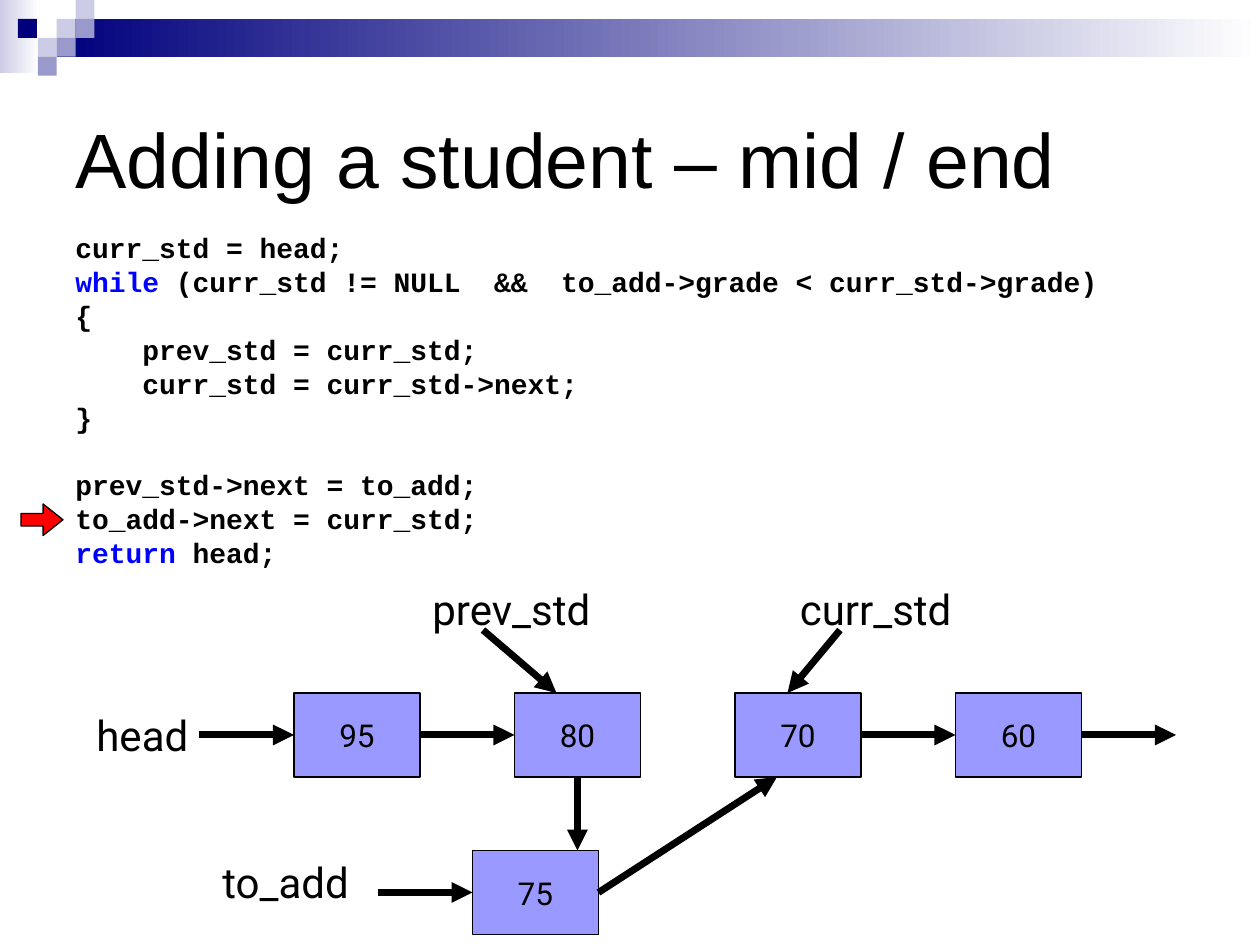
from lxml import etree
from pptx import Presentation
from pptx.dml.color import RGBColor
from pptx.enum.shapes import MSO_CONNECTOR, MSO_SHAPE
from pptx.enum.text import MSO_ANCHOR, PP_ALIGN
from pptx.oxml.ns import qn
from pptx.util import Inches, Pt

RECT, RIGHT_ARROW = MSO_SHAPE.RECTANGLE, MSO_SHAPE.RIGHT_ARROW
STRAIGHT = MSO_CONNECTOR.STRAIGHT
MIDDLE, CENTER = MSO_ANCHOR.MIDDLE, PP_ALIGN.CENTER
TOP_SIDE, LEFT_SIDE, BOTTOM_SIDE, RIGHT_SIDE = range(4)

COLORS = {
    "black": "000000", "white": "FFFFFF", "navy": "00007D", "pale": "CCCCE6",
    "lilac": "9999CC", "node": "9999FF", "keyword": "0000FF", "red": "FF0000",
}
SLIDE_W, SLIDE_H = 10, 7.5
COLS = 120
CELL = SLIDE_W / COLS
TILE = 0.15
NODE_W, NODE_H = 12, 8
NODE_STEP = 21
CHAIN_COL, CHAIN_ROW = 28, 66
CHAIN_MID = CHAIN_ROW + NODE_H / 2

TILES = [(3, 1, "pale"), (4, 0, "pale"), (4, 1, "lilac"), (2, 2, "pale"),
         (0.95, 1, "navy"), (3, 2, "lilac"), (2, 3, "lilac")]

CODE = [
    [("curr_std = head;", "black")],
    [("while", "keyword"),
     (" (curr_std != NULL  &&  to_add->grade < curr_std->grade)", "black")],
    [("{", "black")],
    [("    prev_std = curr_std;", "black")],
    [("    curr_std = curr_std->next;", "black")],
    [("}", "black")],
    [("prev_std->next = to_add;", "black")],
    [("to_add->next = curr_std;", "black")],
    [("return", "keyword"), (" head;", "black")],
]
CODE_GAP, BLOCK_GAP, BLOCK_START = 4.1, 22.7, 6


def rgb(name):
    """Return the named colour."""
    return RGBColor.from_string(COLORS[name])


def grid(n):
    """Convert grid cells to a length."""
    return Inches(n * CELL)


def add_run(p, text, size, font, color="black", bold=False):
    """Append one formatted run to a paragraph."""
    r = p.add_run()
    r.text = text
    r.font.size, r.font.name, r.font.bold = Pt(size), font, bold
    r.font.color.rgb = rgb(color)


def add_box(s, col, row, width, height):
    """Add an empty wrapping text box and return its frame."""
    tf = s.shapes.add_textbox(*map(grid, (col, row, width, height))).text_frame
    tf.word_wrap = True
    return tf


def add_block(s, kind, box, fill, outlined=False):
    """Add a filled shape; two fill names make a left-to-right gradient."""
    sp = s.shapes.add_shape(kind, *map(Inches, box))
    sp.shadow.inherit = False
    if len(fill) == 2:
        sp.fill.gradient()
        sp.fill.gradient_angle = 0
        for stop, name in zip(sp.fill.gradient_stops, fill):
            stop.color.rgb = rgb(name)
    else:
        sp.fill.solid()
        sp.fill.fore_color.rgb = rgb(fill[0])
    if outlined:
        sp.line.color.rgb = rgb("black")
        sp.line.width = Pt(0.75)
    else:
        sp.line.fill.background()
    return sp


def add_node(s, text, col, row):
    """Add one list node holding a grade."""
    box = [n * CELL for n in (col, row, NODE_W, NODE_H)]
    sp = add_block(s, RECT, box, ["node"], outlined=True)
    tf = sp.text_frame
    tf.word_wrap = False
    tf.vertical_anchor = MIDDLE
    p = tf.paragraphs[0]
    p.alignment = CENTER
    add_run(p, text, 18, "Roboto")
    return sp


def add_label(s, text, col, row, width):
    """Add a pointer name."""
    tf = add_box(s, col, row, width, 6)
    add_run(tf.paragraphs[0], text, 24, "Roboto")


def add_arrow(s, start, end, source=None, target=None):
    """Add an arrow between grid points, joined to (shape, side) pairs if given."""
    cxn = s.shapes.add_connector(STRAIGHT, *map(grid, (*start, *end)))
    if source:
        cxn.begin_connect(*source)
    if target:
        cxn.end_connect(*target)
    cxn.line.color.rgb = rgb("black")
    cxn.line.width = Pt(4)
    ln = cxn.line._get_or_add_ln()
    etree.SubElement(ln, qn("a:tailEnd"), type="triangle")
    etree.SubElement(cxn._element.spPr, qn("a:effectLst"))


def add_banner(s):
    """Add the gradient bar and the mosaic of tiles."""
    add_block(s, RECT, (0, 0, 0.31, 0.58), ["pale", "white"])
    add_block(s, RECT, (3 * TILE, TILE, SLIDE_W - 3 * TILE, 2 * TILE), ["navy", "white"])
    for col, row, color in TILES:
        add_block(s, RECT, (col * TILE, row * TILE, TILE, TILE), [color])


def add_title(s, text):
    """Add the slide title."""
    tf = add_box(s, 6, 6, 108, 18)
    tf.vertical_anchor = MIDDLE
    add_run(tf.paragraphs[0], text, 44, "Arial")


def add_code(s):
    """Add the code listing and the marker of the current line."""
    tf = add_box(s, 6, 22, 106, 31)
    for i, line in enumerate(CODE):
        p = tf.add_paragraph() if i else tf.paragraphs[0]
        p.line_spacing = 0.8
        if i:
            p.space_before = Pt(BLOCK_GAP if i == BLOCK_START else CODE_GAP)
        for text, color in line:
            add_run(p, text, 16, "Courier New", color, bold=True)
    marker = add_block(s, RIGHT_ARROW, (2 * CELL, 48 * CELL, 4 * CELL, 3 * CELL),
                       ["red"], outlined=True)
    marker.adjustments[0], marker.adjustments[1] = 0.4, 0.63


def add_list(s):
    """Add the linked list with its pointers."""
    chain = [add_node(s, grade, CHAIN_COL + i * NODE_STEP, CHAIN_ROW)
             for i, grade in enumerate(("95", "80", "70", "60"))]
    first, prev, curr, last = chain
    new = add_node(s, "75", 45, 81)

    for text, col, row, width in (("head", 8, 67, 15), ("to_add", 20, 81, 15),
                                  ("curr_std", 75, 55, 18), ("prev_std", 40, 55, 18)):
        add_label(s, text, col, row, width)

    for a, b in ((first, prev), (curr, last)):
        add_arrow(s, (0, 0), (0, 0), (a, RIGHT_SIDE), (b, LEFT_SIDE))
    add_arrow(s, (103, CHAIN_MID), (112, CHAIN_MID), source=(last, RIGHT_SIDE))
    add_arrow(s, (19, CHAIN_MID), (28, CHAIN_MID), target=(first, LEFT_SIDE))
    add_arrow(s, (36, 85), (45, 85), target=(new, LEFT_SIDE))
    add_arrow(s, (55, 74), (55, 81), source=(prev, BOTTOM_SIDE))
    add_arrow(s, (57, 85), (74, 74), source=(new, RIGHT_SIDE))
    add_arrow(s, (80, 60), (75, CHAIN_ROW))
    add_arrow(s, (46, 60), (53, CHAIN_ROW))


def main():
    """Build and save the slide."""
    prs = Presentation()
    prs.slide_width, prs.slide_height = Inches(SLIDE_W), Inches(SLIDE_H)
    s = prs.slides.add_slide(prs.slide_layouts[6])
    add_banner(s)
    add_title(s, "Adding a student – mid / end")
    add_code(s)
    add_list(s)
    prs.save("out.pptx")


if __name__ == "__main__":
    main()
